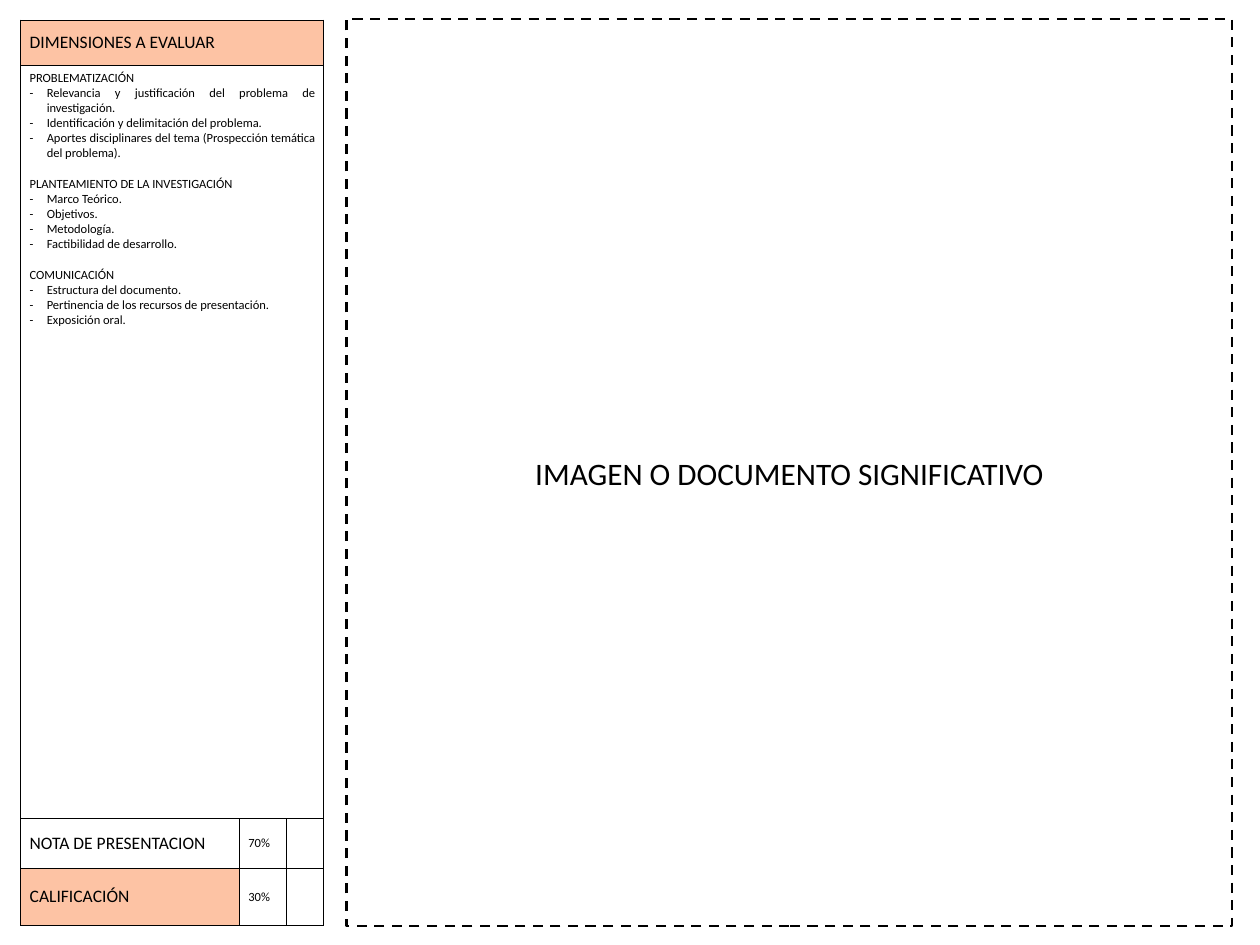
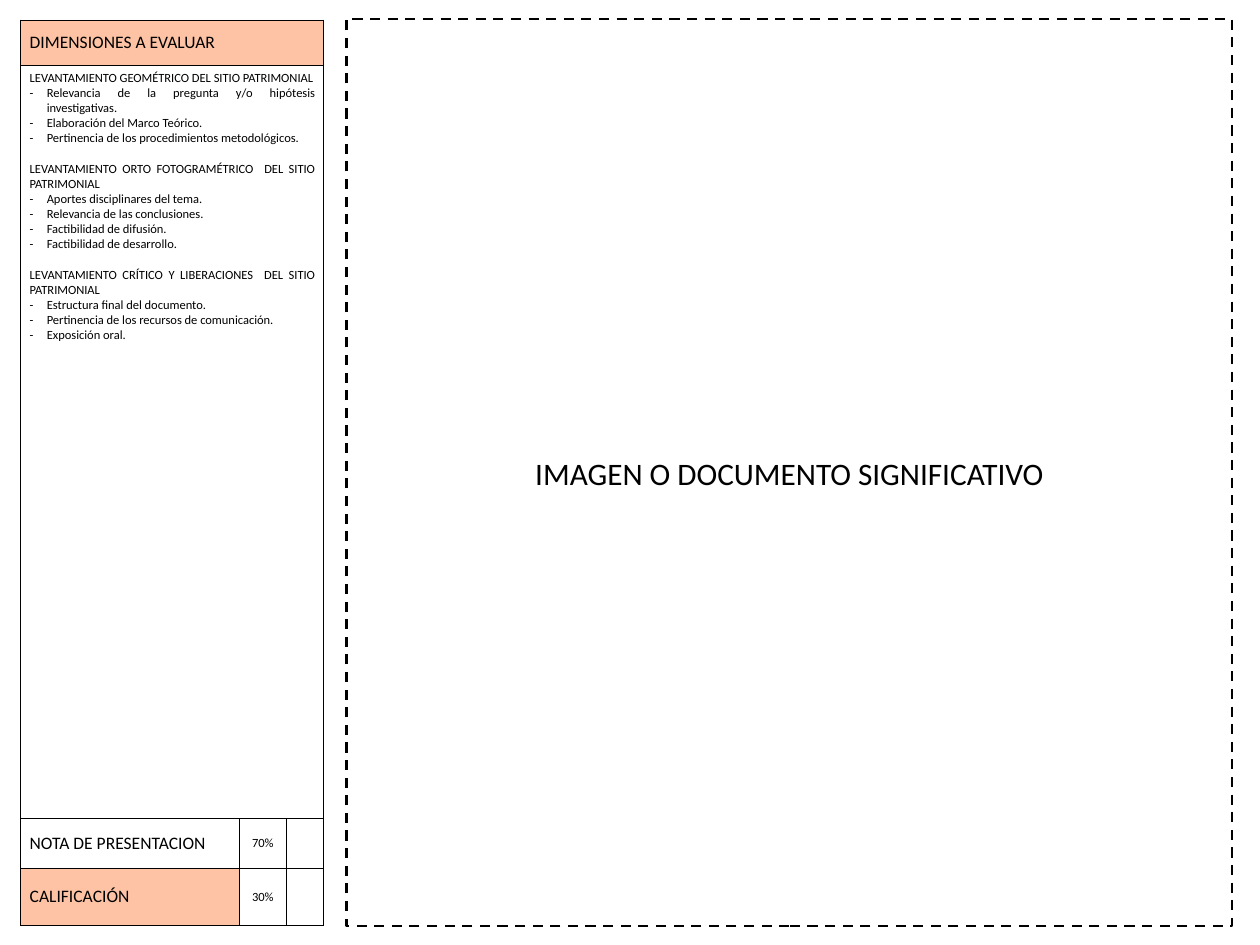
from lxml.etree import SubElement
from pptx import Presentation
from pptx.dml.color import RGBColor
from pptx.enum.dml import MSO_LINE
from pptx.enum.shapes import MSO_SHAPE
from pptx.enum.text import MSO_ANCHOR as ANCHOR, PP_ALIGN as ALIGN
from pptx.oxml.ns import qn
from pptx.util import Inches, Pt

COLORS = {"ink": "000000", "paper": "FFFFFF", "peach": "FDC3A4"}
FONT = "Calibri"
COLS = (2.43, 0.52, 0.42)
ROWS = (0.51, 8.37, 0.55, 0.63)
RUBRIC_BOX = (0.23, 0.22, sum(COLS), sum(ROWS))
FRAME_BOX = (3.85, 0.21, 9.84, 10.08)
GRADES = (("NOTA DE PRESENTACION", "70%", "paper"), ("CALIFICACIÓN", "30%", "peach"))

RESEARCH = {
    "PROBLEMATIZACIÓN": (
        "Relevancia y justificación del problema de investigación.",
        "Identificación y delimitación del problema.",
        "Aportes disciplinares del tema (Prospección temática del problema).",
    ),
    "PLANTEAMIENTO DE LA INVESTIGACIÓN": (
        "Marco Teórico.",
        "Objetivos.",
        "Metodología.",
        "Factibilidad de desarrollo.",
    ),
    "COMUNICACIÓN": (
        "Estructura del documento.",
        "Pertinencia de los recursos de presentación.",
        "Exposición oral.",
    ),
}
HERITAGE = {
    "LEVANTAMIENTO GEOMÉTRICO DEL SITIO PATRIMONIAL": (
        "Relevancia de la pregunta y/o hipótesis investigativas.",
        "Elaboración del Marco Teórico.",
        "Pertinencia de los procedimientos metodológicos.",
    ),
    "LEVANTAMIENTO ORTO FOTOGRAMÉTRICO  DEL SITIO PATRIMONIAL": (
        "Aportes disciplinares del tema.",
        "Relevancia de las conclusiones.",
        "Factibilidad de difusión.",
        "Factibilidad de desarrollo.",
    ),
    "LEVANTAMIENTO CRÍTICO Y LIBERACIONES  DEL SITIO PATRIMONIAL": (
        "Estructura final del documento.",
        "Pertinencia de los recursos de comunicación.",
        "Exposición oral.",
    ),
}


def rgb(name):
    """Return the named colour."""
    return RGBColor.from_string(COLORS[name])


def write(p, text, size, align):
    """Add one styled run to a paragraph."""
    p.alignment = align
    r = p.add_run()
    r.text = text
    r.font.size = Pt(size)
    r.font.name = FONT
    r.font.color.rgb = rgb("ink")


def add_dash(p):
    """Give a paragraph a hanging dash bullet."""
    pPr = p._p.get_or_add_pPr()
    pPr.set("marL", str(Inches(0.19)))
    pPr.set("indent", str(-Inches(0.19)))
    SubElement(pPr, qn("a:buFont"), typeface=FONT)
    SubElement(pPr, qn("a:buChar"), char="-")


def add_borders(cell, row, col):
    """Draw the cell's edges, thin at the top and between grade cells."""
    widths = {
        "L": 0.5 if row > 1 and col == 1 else 1,
        "R": 0.5 if row > 1 and col == 0 else 1,
        "T": 0.5 if row in (0, 3) else 1,
        "B": 0.5 if row == 2 else 1,
    }
    tcPr = cell._tc.get_or_add_tcPr()
    for side, width in widths.items():
        ln = SubElement(tcPr, qn(f"a:ln{side}"), w=str(Pt(width)))
        fill = SubElement(ln, qn("a:solidFill"))
        SubElement(fill, qn("a:srgbClr"), val=COLORS["ink"])


def fill_cell(cell, color):
    """Paint a cell and centre its text vertically."""
    cell.fill.solid()
    cell.fill.fore_color.rgb = rgb(color)
    cell.vertical_anchor = ANCHOR.MIDDLE


def add_criteria(cell, criteria):
    """List each heading with its dashed criteria."""
    cell.vertical_anchor = ANCHOR.TOP
    tf = cell.text_frame
    for i, (heading, items) in enumerate(criteria.items()):
        p = tf.add_paragraph() if i else tf.paragraphs[0]
        p.space_before = Pt(12.2 if i else 0)
        write(p, heading, 10, ALIGN.JUSTIFY)
        for item in items:
            p = tf.add_paragraph()
            add_dash(p)
            write(p, item, 10, ALIGN.JUSTIFY)


def add_rubric(s, box, criteria, label_align, percent_align):
    """Build the table of dimensions and grades."""
    table = s.shapes.add_table(len(ROWS), len(COLS), *map(Inches, box)).table
    table.first_row = table.horz_banding = False
    for column, width in zip(table.columns, COLS):
        column.width = Inches(width)
    for row, height in zip(table.rows, ROWS):
        row.height = Inches(height)
    for i in range(len(ROWS)):
        for j in range(len(COLS)):
            add_borders(table.cell(i, j), i, j)
            fill_cell(table.cell(i, j), "paper")
    for i in (0, 1):
        table.cell(i, 0).merge(table.cell(i, len(COLS) - 1))

    header = table.cell(0, 0)
    fill_cell(header, "peach")
    write(header.text_frame.paragraphs[0], "DIMENSIONES A EVALUAR", 14, label_align)
    add_criteria(table.cell(1, 0), criteria)
    for i, (label, percent, color) in enumerate(GRADES, 2):
        fill_cell(table.cell(i, 0), color)
        write(table.cell(i, 0).text_frame.paragraphs[0], label, 14, label_align)
        write(table.cell(i, 1).text_frame.paragraphs[0], percent, 10, percent_align)


def add_frame(s, box):
    """Draw the dashed area for the main image or document."""
    sp = s.shapes.add_shape(MSO_SHAPE.RECTANGLE, *map(Inches, box))
    sp.shadow.inherit = False
    sp.fill.background()
    sp.line.color.rgb = rgb("ink")
    sp.line.width = Pt(2)
    sp.line.dash_style = MSO_LINE.DASH
    tf = sp.text_frame
    tf.word_wrap = True
    tf.vertical_anchor = ANCHOR.MIDDLE
    write(tf.paragraphs[0], "IMAGEN O DOCUMENTO SIGNIFICATIVO", 25, ALIGN.CENTER)


def add_sheet(prs, criteria, label_align, percent_align):
    """Add an evaluation slide with its frame and rubric."""
    s = prs.slides.add_slide(prs.slide_layouts[6])
    add_frame(s, FRAME_BOX)
    add_rubric(s, RUBRIC_BOX, criteria, label_align, percent_align)


def main():
    """Build and save the presentation."""
    prs = Presentation()
    prs.slide_width, prs.slide_height = Inches(14), Inches(10.5)
    add_sheet(prs, RESEARCH, ALIGN.JUSTIFY, ALIGN.JUSTIFY)
    add_sheet(prs, HERITAGE, ALIGN.LEFT, ALIGN.CENTER)
    prs.save("out.pptx")


if __name__ == "__main__":
    main()
